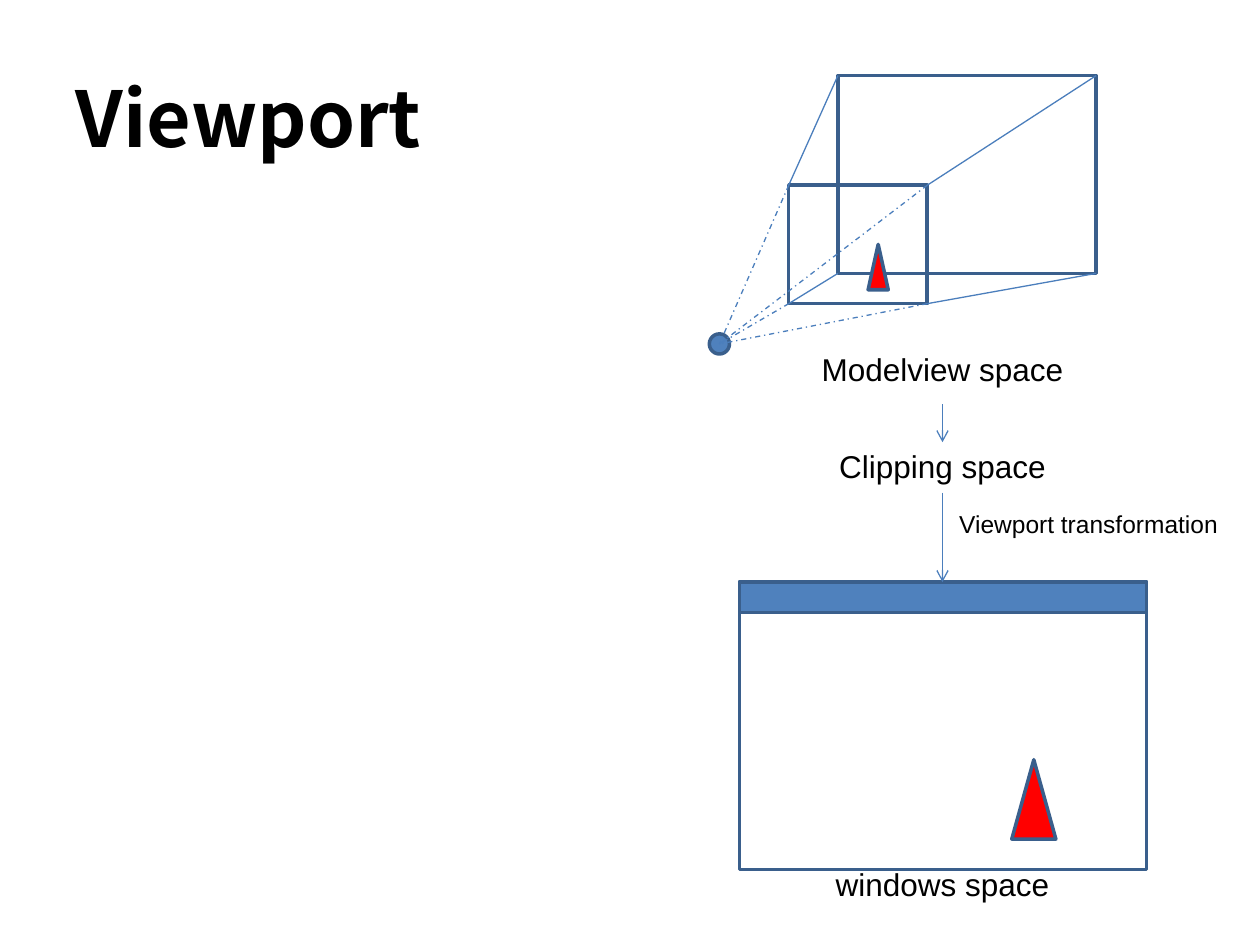
from dataclasses import dataclass
from typing import NamedTuple, Optional

from lxml import etree
from pptx import Presentation
from pptx.dml.color import RGBColor
from pptx.enum.dml import MSO_LINE
from pptx.enum.shapes import MSO_CONNECTOR, MSO_SHAPE
from pptx.enum.text import MSO_ANCHOR, PP_ALIGN
from pptx.oxml import parse_xml
from pptx.oxml.ns import nsdecls, qn
from pptx.util import Inches, Pt

RECT = MSO_SHAPE.RECTANGLE
OVAL = MSO_SHAPE.OVAL
CONE = MSO_SHAPE.ISOSCELES_TRIANGLE
STRAIGHT = MSO_CONNECTOR.STRAIGHT
DASH = MSO_LINE.DASH_DOT
LEFT = PP_ALIGN.LEFT
CENTER = PP_ALIGN.CENTER
MIDDLE = MSO_ANCHOR.MIDDLE


@dataclass(frozen=True)
class Theme:
    ink: str = "000000"
    paper: str = "FFFFFF"
    blue: str = "4F81BD"
    edge: str = "3A5F8C"
    ray: str = "4B7EBC"
    red: str = "FF0000"
    head: str = "Noto Sans CJK SC"
    body: str = "Arial"
    title: float = 44
    label: float = 18
    note: float = 14
    thick: float = 2
    thin: float = 0.75


class Box(NamedTuple):
    left: float
    top: float
    width: float
    height: float

    def place(self) -> list:
        return [Inches(side) for side in self]

    def corners(self) -> list:
        right, bottom = self.left + self.width, self.top + self.height
        return [(x, y) for y in (self.top, bottom) for x in (self.left, right)]


class Form(NamedTuple):
    kind: int
    box: Box
    fill: Optional[str]


class Label(NamedTuple):
    text: str
    box: Box
    size: float


THEME = Theme()
FAR = Box(6.65, 0.6, 2.05, 1.57)
NEAR = Box(6.26, 1.47, 1.1, 0.94)
EYE = Box(5.63, 2.65, 0.16, 0.16)
FOCUS = (5.71, 2.73)
AXIS = 7.48

FORMS = [
    Form(RECT, FAR, THEME.paper),
    Form(RECT, NEAR, None),
    Form(OVAL, EYE, THEME.blue),
    Form(RECT, Box(5.87, 4.62, 3.23, 2.28), THEME.paper),
    Form(RECT, Box(5.87, 4.62, 3.23, 0.24), THEME.blue),
    Form(CONE, Box(6.89, 1.94, 0.16, 0.36), THEME.red),
    Form(CONE, Box(8.03, 6.03, 0.35, 0.63), THEME.red),
]
LABELS = [
    Label("Modelview space", Box(6.26, 2.73, 2.44, 0.4), THEME.label),
    Label("Clipping space", Box(6.1, 3.5, 2.76, 0.4), THEME.label),
    Label("Viewport transformation", Box(7.48, 3.99, 2.32, 0.34), THEME.note),
    Label("windows space", Box(6.1, 6.82, 2.76, 0.4), THEME.label),
]
ARROWS = [(3.21, 3.51), (3.91, 4.62)]


def style(font, name: str, size: float) -> None:
    font.size = Pt(size)
    font.color.rgb = RGBColor.from_string(THEME.ink)
    font.name = name


def draw_title(slide, text: str, box: Box) -> None:
    title = slide.shapes.title
    title.left, title.top, title.width, title.height = box.place()
    frame = title.text_frame
    frame.text = text
    frame.vertical_anchor = MIDDLE
    line = frame.paragraphs[0]
    line.alignment = LEFT
    style(line.font, THEME.head, THEME.title)
    line.font.bold = True
    glow = parse_xml(
        f'<a:effectLst {nsdecls("a")}>'
        '<a:outerShdw blurRad="38100" dist="38100" dir="2700000">'
        '<a:srgbClr val="000000"><a:alpha val="43000"/></a:srgbClr>'
        "</a:outerShdw></a:effectLst>"
    )
    line.runs[0].font.bold = True
    line.runs[0]._r.get_or_add_rPr().append(glow)


def draw_form(slide, form: Form) -> None:
    shape = slide.shapes.add_shape(form.kind, *form.box.place())
    shape.shadow.inherit = False
    if form.fill:
        shape.fill.solid()
        shape.fill.fore_color.rgb = RGBColor.from_string(form.fill)
    else:
        shape.fill.background()
    shape.line.color.rgb = RGBColor.from_string(THEME.edge)
    shape.line.width = Pt(THEME.thick)


def draw_line(slide, start: tuple, end: tuple, dash: bool = False,
              arrow: bool = False) -> None:
    ends = [Inches(value) for value in (*start, *end)]
    link = slide.shapes.add_connector(STRAIGHT, *ends)
    link.line.color.rgb = RGBColor.from_string(THEME.ray)
    link.line.width = Pt(THEME.thin)
    if dash:
        link.line.dash_style = DASH
    props = link._element.spPr
    if arrow:
        etree.SubElement(props.find(qn("a:ln")), qn("a:tailEnd"), type="arrow")
    etree.SubElement(props, qn("a:effectLst"))


def draw_label(slide, label: Label) -> None:
    frame = slide.shapes.add_textbox(*label.box.place()).text_frame
    frame.word_wrap = True
    frame.text = label.text
    line = frame.paragraphs[0]
    line.alignment = CENTER
    style(line.font, THEME.body, label.size)


def main() -> None:
    deck = Presentation()
    deck.slide_width, deck.slide_height = Inches(10), Inches(7.5)
    slide = deck.slides.add_slide(deck.slide_layouts[5])
    draw_title(slide, "Viewport", Box(0.5, 0.3, 7.18, 1.25))
    for form in FORMS:
        draw_form(slide, form)
    for far, near in zip(FAR.corners(), NEAR.corners()):
        draw_line(slide, far, near)
        draw_line(slide, near, FOCUS, dash=True)
    for top, bottom in ARROWS:
        draw_line(slide, (AXIS, top), (AXIS, bottom), arrow=True)
    for label in LABELS:
        draw_label(slide, label)
    deck.save("out.pptx")


if __name__ == "__main__":
    main()
